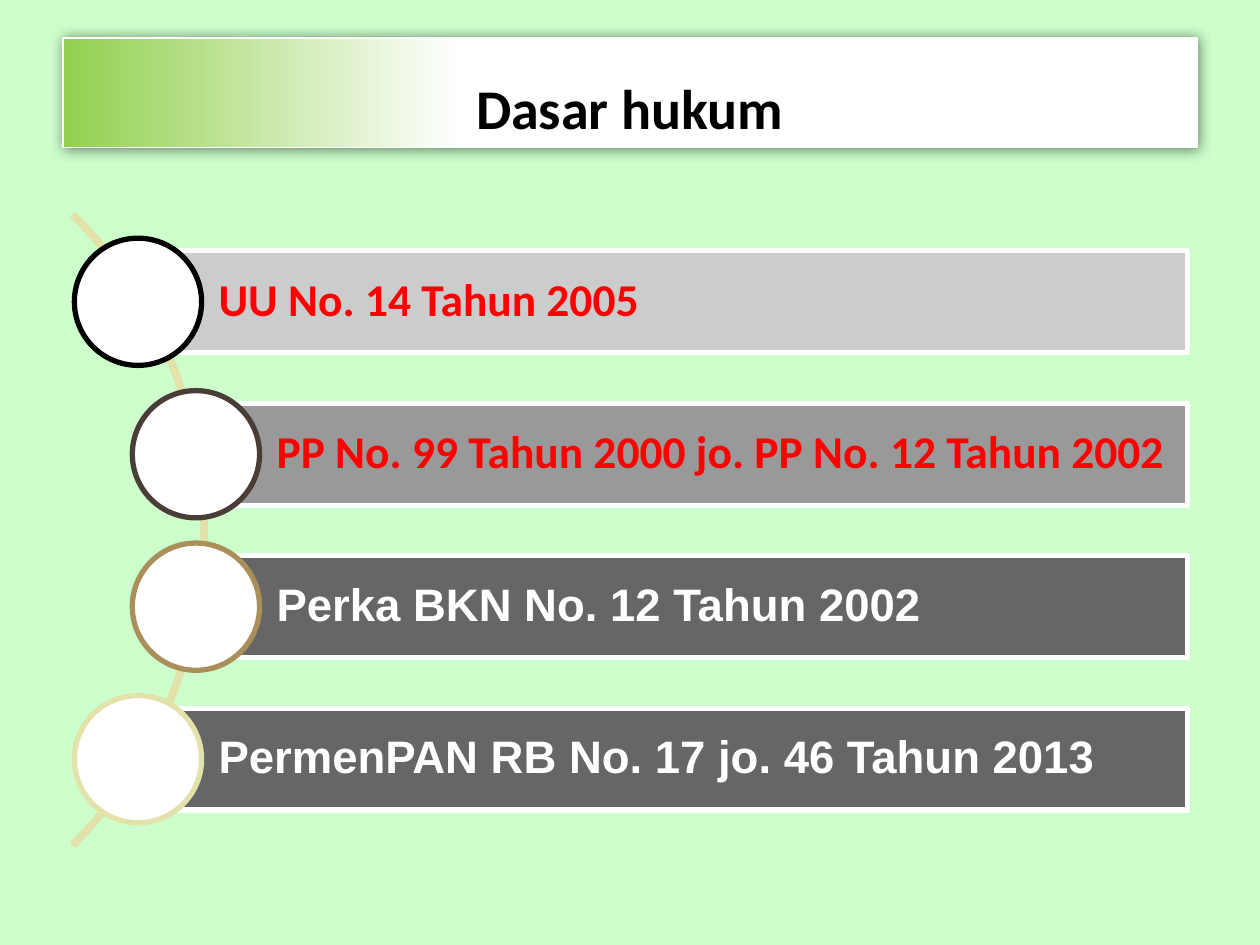
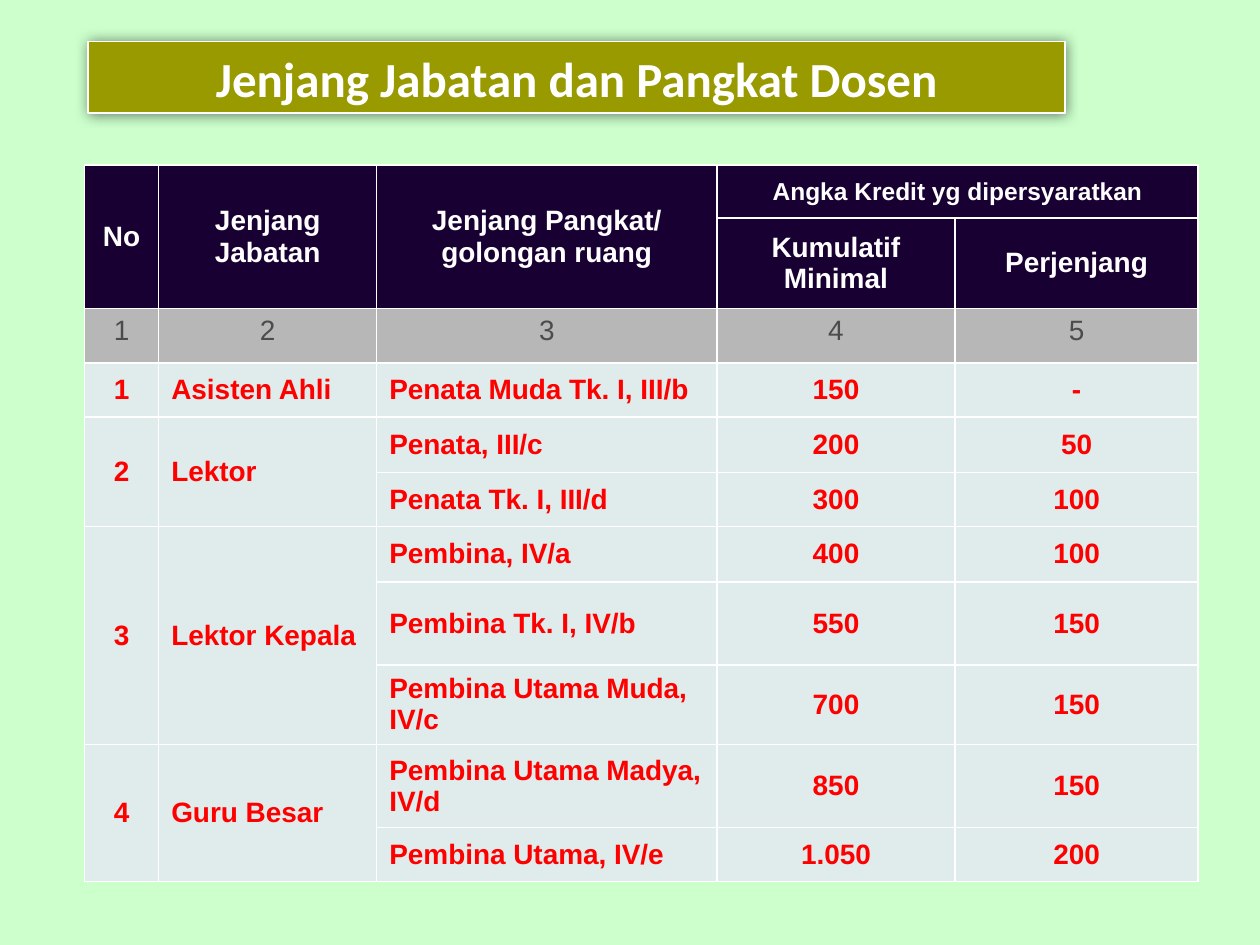
from dataclasses import dataclass
from lxml.etree import SubElement
from pptx import Presentation
from pptx.dml.color import RGBColor
from pptx.enum.shapes import MSO_SHAPE
from pptx.enum.text import MSO_ANCHOR, MSO_AUTO_SIZE, PP_ALIGN
from pptx.oxml.ns import qn
from pptx.util import Inches, Pt


@dataclass(frozen=True)
class Theme:
    back: str = "CCFFCC"
    white: str = "FFFFFF"
    black: str = "000000"
    red: str = "FF0000"
    lime: str = "92D050"
    olive: str = "999900"
    arc: str = "E2E2AA"
    head: str = "190033"
    index: str = "B7B7B7"
    index_text: str = "4C4C4C"
    body: str = "E0EBEB"
    sans: str = "Calibri"
    plain: str = "Arial"
    title: int = 32
    band: int = 28
    law: int = 26
    cell: int = 16
    small: int = 14


T = Theme()
COLS, ROWS = 100, 75  # slide grid, each unit a tenth of an inch

# text, bar fill, ring colour, text colour, font, ring's left column
LAWS = [
    ("UU No. 14 Tahun 2005", "CCCCCC", T.black, T.red, T.sans, 5.9),
    ("PP No. 99 Tahun 2000 jo. PP No. 12 Tahun 2002", "999999", "4A3C36",
     T.red, T.sans, 10.5),
    ("Perka BKN No. 12 Tahun 2002", "666666", "AB8F5B", T.white, T.plain, 10.5),
    ("PermenPAN RB No. 17 jo. 46 Tahun 2013", "666666", T.arc, T.white,
     T.plain, 5.9),
]

# None continues the cell above
RANKS = [
    ("No", "Jenjang Jabatan", "Jenjang Pangkat/\ngolongan ruang",
     "Angka Kredit yg dipersyaratkan", None),
    (None, None, None, "Kumulatif Minimal", "Perjenjang"),
    ("1", "2", "3", "4", "5"),
    ("1", "Asisten Ahli", "Penata Muda Tk. I, III/b", "150", "-"),
    ("2", "Lektor", "Penata, III/c", "200", "50"),
    (None, None, "Penata Tk. I, III/d", "300", "100"),
    ("3", "Lektor Kepala", "Pembina, IV/a", "400", "100"),
    (None, None, "Pembina Tk. I, IV/b", "550", "150"),
    (None, None, "Pembina Utama Muda, IV/c", "700", "150"),
    ("4", "Guru Besar", "Pembina Utama Madya, IV/d", "850", "150"),
    (None, None, "Pembina Utama, IV/e", "1.050", "200"),
]
WIDTHS = [5.9, 17.3, 27, 18.9, 19.3]
HEIGHTS = [4.2, 7.2, 4.3, 4.3, 4.4, 4.3, 4.4, 6.6, 6.3, 6.6, 4.3]


def unit(count):
    return Inches(count / 10)


def rgb(code):
    return RGBColor.from_string(code)


def style(frame, size, color, font, bold=True, align=PP_ALIGN.LEFT):
    for para in frame.paragraphs:
        para.alignment = align
        para.font.size = Pt(size)
        para.font.bold = bold
        para.font.name = font
        para.font.color.rgb = rgb(color)


def paint(shape, fill, line, width):
    if fill:
        shape.fill.solid()
        shape.fill.fore_color.rgb = rgb(fill)
    else:
        shape.fill.background()
    shape.line.color.rgb = rgb(line)
    shape.line.width = Pt(width)


def glow(shape):
    """Add a soft, centred shadow."""
    effects = SubElement(shape._element.spPr, qn("a:effectLst"))
    shade = SubElement(effects, qn("a:outerShdw"),
                       blurRad=str(Pt(7.5)), dist="0", dir="0")
    color = SubElement(shade, qn("a:srgbClr"), val=T.black)
    SubElement(color, qn("a:alpha"), val="50000")


def add_title(slide, text, box, fill, color, size, anchor):
    title = slide.shapes.title
    title.left, title.top, title.width, title.height = map(unit, box)
    paint(title, fill, T.white, 1)
    glow(title)
    frame = title.text_frame
    frame.text = text
    frame.auto_size = MSO_AUTO_SIZE.NONE
    frame.vertical_anchor = anchor
    style(frame, size, color, T.sans, align=PP_ALIGN.CENTER)
    return title


def add_shape(slide, kind, box, fill, line):
    shape = slide.shapes.add_shape(kind, *map(unit, box))
    shape.shadow.inherit = False
    paint(shape, fill, line, 3)
    return shape


def add_arc(slide):
    arc = add_shape(slide, MSO_SHAPE.BLOCK_ARC, (-54.4, 6.7, 70.7, 70.7),
                    None, T.arc)
    for i, value in enumerate((189, 27, 0.003)):
        arc.adjustments[i] = value


def add_law(slide, row, law):
    text, fill, ring, color, font, left = law
    size, top = 10.1, 18.9 + 12.1 * row
    mid = left + size / 2
    bar = add_shape(slide, MSO_SHAPE.RECTANGLE,
                    (mid, top + 1, 94.25 - mid, 8.1), fill, T.white)
    frame = bar.text_frame
    frame.text = text
    frame.word_wrap = True
    frame.vertical_anchor = MSO_ANCHOR.MIDDLE
    frame.margin_left, frame.margin_right = unit(6.4), unit(0.7)
    frame.paragraphs[0].line_spacing = 0.9
    style(frame, T.law, color, font)
    add_shape(slide, MSO_SHAPE.OVAL, (left, top, size, size), T.white, ring)


def fill_cell(cell, fill):
    props = cell._tc.get_or_add_tcPr()
    for side in ("lnL", "lnR", "lnT", "lnB"):
        line = SubElement(props, qn("a:" + side), w=str(Pt(1)))
        paint = SubElement(line, qn("a:solidFill"))
        SubElement(paint, qn("a:srgbClr"), val=T.white)
    cell.fill.solid()
    cell.fill.fore_color.rgb = rgb(fill)


def write_cell(cell, text, row, col):
    cell.text = text
    cell.vertical_anchor = MSO_ANCHOR.TOP if row == 2 else MSO_ANCHOR.MIDDLE
    color = T.white if row < 2 else T.index_text if row == 2 else T.red
    size = T.small if (row, col) == (0, 3) else T.cell
    left = row > 2 and col in (1, 2)
    style(cell.text_frame, size, color, T.plain, bold=row != 2,
          align=PP_ALIGN.LEFT if left else PP_ALIGN.CENTER)


def merge_down(table, col):
    """Join each cell with the empty ones that follow it in the column."""
    start = 0
    for row in range(1, len(RANKS) + 1):
        if row == len(RANKS) or RANKS[row][col] is not None:
            if row - start > 1:
                table.cell(start, col).merge(table.cell(row - 1, col))
            start = row


def add_ranks(slide):
    box = (6.7, 13.1, sum(WIDTHS), sum(HEIGHTS))
    table = slide.shapes.add_table(len(RANKS), len(WIDTHS),
                                   *map(unit, box)).table
    for col, width in zip(table.columns, WIDTHS):
        col.width = unit(width)
    for row, height in zip(table.rows, HEIGHTS):
        row.height = unit(height)
    for r, texts in enumerate(RANKS):
        fill = T.head if r < 2 else T.index if r == 2 else T.body
        for c, text in enumerate(texts):
            cell = table.cell(r, c)
            fill_cell(cell, fill)
            if text is not None:
                write_cell(cell, text, r, c)
    for col in range(2):
        merge_down(table, col)
    table.cell(0, 2).merge(table.cell(1, 2))
    table.cell(0, 3).merge(table.cell(0, 4))


def law_slide(deck):
    slide = deck.slides.add_slide(deck.slide_layouts[5])
    title = add_title(slide, "Dasar hukum", (5, 3, 90, 8.7), T.white, T.black,
                      T.title, MSO_ANCHOR.BOTTOM)
    title.fill.gradient()
    title.fill.gradient_angle = 0
    stops = zip(title.fill.gradient_stops, (0, 0.35), (T.lime, T.white))
    for stop, place, color in stops:
        stop.position = place
        stop.color.rgb = rgb(color)
    add_arc(slide)
    for row, law in enumerate(LAWS):
        add_law(slide, row, law)


def rank_slide(deck):
    slide = deck.slides.add_slide(deck.slide_layouts[5])
    add_title(slide, "Jenjang Jabatan dan Pangkat Dosen", (7, 3.3, 77.5, 5.7),
              T.olive, T.white, T.band, MSO_ANCHOR.MIDDLE)
    add_ranks(slide)


def main():
    deck = Presentation()
    deck.slide_width, deck.slide_height = unit(COLS), unit(ROWS)
    back = deck.slide_master.background.fill
    back.solid()
    back.fore_color.rgb = rgb(T.back)
    law_slide(deck)
    rank_slide(deck)
    deck.save("out.pptx")


if __name__ == "__main__":
    main()
